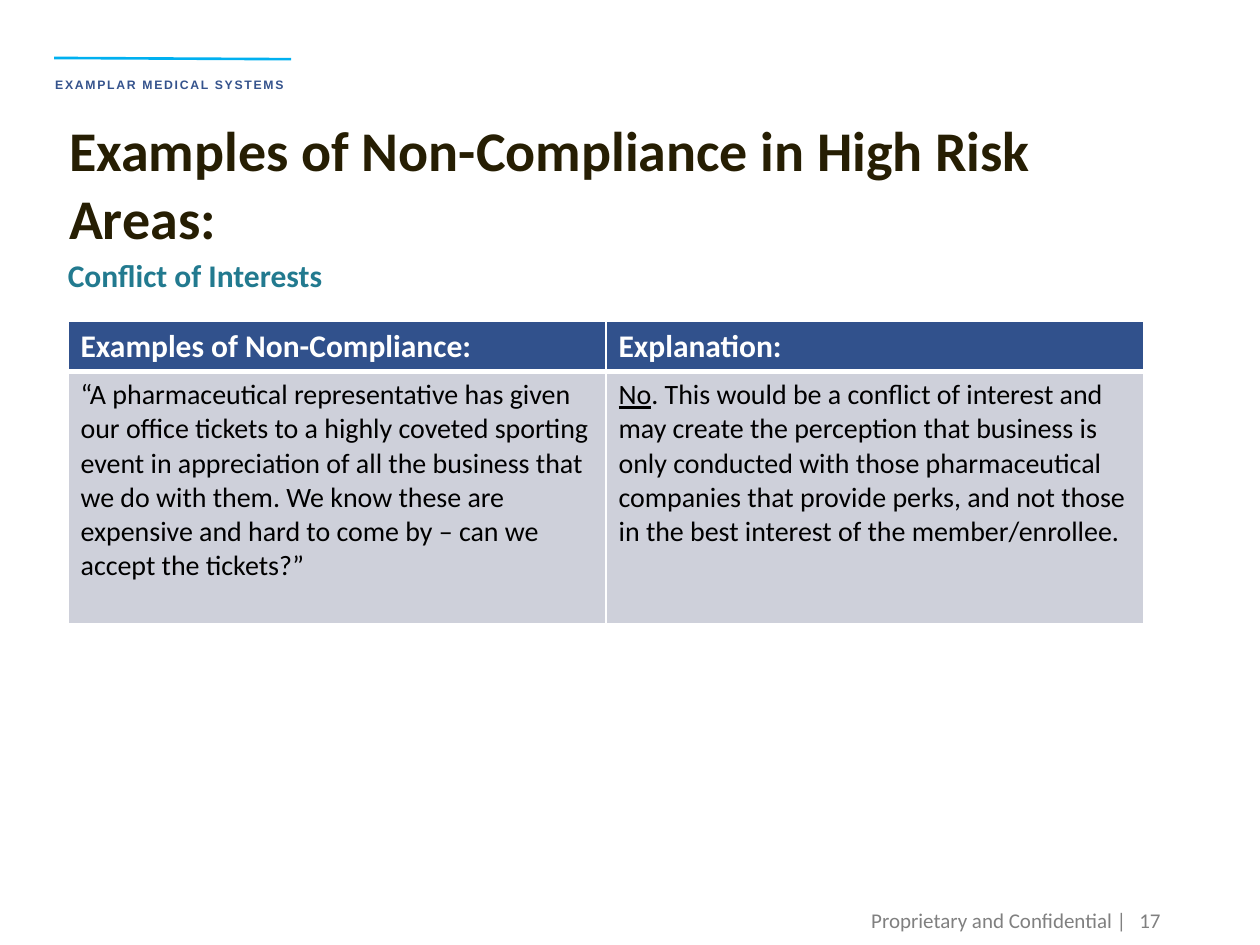
from lxml import etree
from pptx import Presentation
from pptx.dml.color import RGBColor
from pptx.enum.shapes import MSO_CONNECTOR
from pptx.enum.text import MSO_ANCHOR as Anchor, PP_ALIGN as Align
from pptx.oxml.ns import qn
from pptx.util import Inches, Pt

WHITE = "FFFFFF"
GREY = "808080"
HEADINGS = ["Examples of Non-Compliance:", "Explanation:"]
QUESTION = (
    "“A pharmaceutical representative has given our office tickets to a highly "
    "coveted sporting event in appreciation of all the business that we do with "
    "them. We know these are expensive and hard to come by – can we accept the "
    "tickets?”"
)
REASON = (
    ". This would be a conflict of interest and may create the perception that "
    "business is only conducted with those pharmaceutical companies that provide "
    "perks, and not those in the best interest of the member/enrollee."
)


def color(value):
    """Turn a hex string into a colour."""
    return RGBColor.from_string(value)


def add_run(paragraph, text, size, hue, bold=False, underline=False, face="Calibri"):
    """Append one formatted run and return it."""
    run = paragraph.add_run()
    run.text = text
    font = run.font
    font.name, font.size, font.bold = face, Pt(size), bold
    font.underline = underline
    font.color.rgb = color(hue)
    return run


def add_text(slide, box, text, size, hue, bold=False, face="Calibri",
             align=Align.LEFT, anchor=Anchor.TOP, wrap=True, spacing=1.0):
    """Place a one-paragraph text box and return its run."""
    frame = slide.shapes.add_textbox(*map(Inches, box)).text_frame
    frame.word_wrap = wrap
    frame.vertical_anchor = anchor
    paragraph = frame.paragraphs[0]
    paragraph.alignment = align
    paragraph.line_spacing = spacing
    return add_run(paragraph, text, size, hue, bold, face=face)


def add_brand_rule(slide):
    """Draw the thin rule above the organisation name."""
    ends = map(Inches, (0.43, 0.46, 2.31, 0.47))
    rule = slide.shapes.add_connector(MSO_CONNECTOR.STRAIGHT, *ends)
    rule.line.color.rgb = color("00B0F0")
    rule.line.width = Pt(1.5)
    etree.SubElement(rule._element.spPr, qn("a:effectLst"))


def style_cell(cell, fill, top, bottom):
    """Fill a cell and give it white borders."""
    cell.fill.solid()
    cell.fill.fore_color.rgb = color(fill)
    properties = cell._tc.get_or_add_tcPr()
    widths = {"lnL": 1, "lnR": 1, "lnT": top, "lnB": bottom}
    for place, (side, width) in enumerate(widths.items()):
        border = etree.Element(qn(f"a:{side}"), w=str(Pt(width)))
        paint = etree.SubElement(border, qn("a:solidFill"))
        etree.SubElement(paint, qn("a:srgbClr"), val=WHITE)
        properties.insert(place, border)


def add_examples_table(slide):
    """Build the table of the example and its explanation."""
    area = map(Inches, (0.54, 2.55, 8.54, 2.4))
    table = slide.shapes.add_table(2, 2, *area).table
    for row, height in zip(table.rows, (0.4, 2)):
        row.height = Inches(height)
    for column in table.columns:
        column.width = Inches(4.27)
    answers = [[(QUESTION, False)], [("No", True), (REASON, False)]]
    for index, (heading, answer) in enumerate(zip(HEADINGS, answers)):
        header, body = table.cell(0, index), table.cell(1, index)
        style_cell(header, "31518C", 1, 3)
        style_cell(body, "CED0DA", 3, 1)
        add_run(header.text_frame.paragraphs[0], heading, 18, WHITE, bold=True)
        for text, underline in answer:
            add_run(body.text_frame.paragraphs[0], text, 16, "000000",
                    underline=underline)


def main():
    """Build and save the slide."""
    deck = Presentation()
    deck.slide_width, deck.slide_height = Inches(10), Inches(7.5)
    slide = deck.slides.add_slide(deck.slide_layouts[6])

    organisation = add_text(slide, (0.34, 0.46, 2.04, 0.29), "EXAMPLAR MEDICAL SYSTEMS",
                            7, "35538D", True, "Arial", wrap=False, spacing=Pt(16))
    organisation.font._element.set("spc", "100")
    add_brand_rule(slide)
    for box, text in (((5.66, 7.1, 3.38, 0.4), "Proprietary and Confidential |"),
                      ((8.85, 7.1, 0.46, 0.4), "17")):
        add_text(slide, box, text, 12, GREY, align=Align.RIGHT, anchor=Anchor.MIDDLE)
    add_text(slide, (0.45, 0.87, 8.98, 1.17),
             "Examples of Non-Compliance in High Risk Areas:", 32, "261E03", True)
    add_text(slide, (0.44, 2.02, 2.24, 0.37), "Conflict of Interests",
             18, "227A8F", True, wrap=False, spacing=0.9)
    add_examples_table(slide)
    deck.save("out.pptx")


if __name__ == "__main__":
    main()
